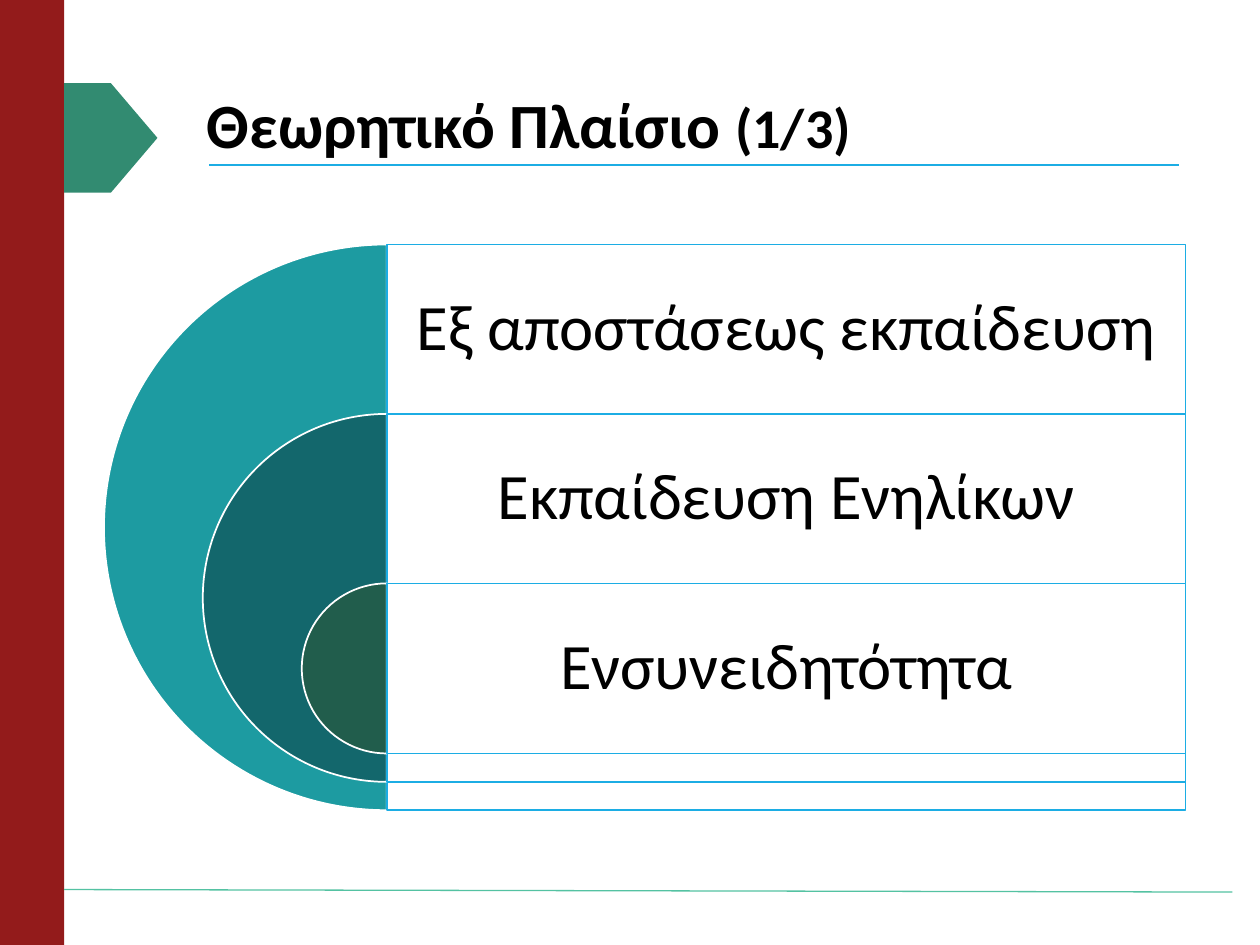
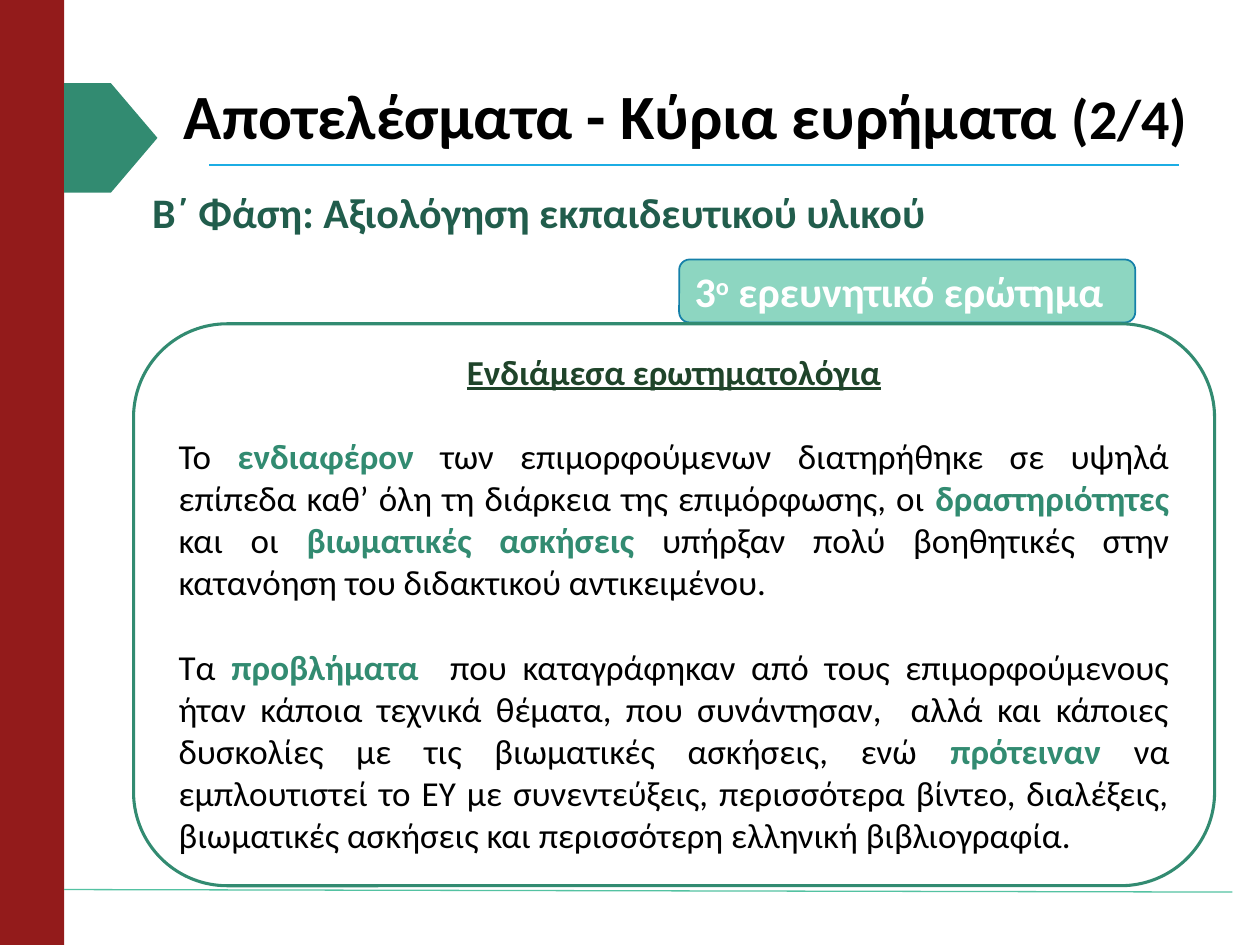
from lxml import etree
from pptx import Presentation
from pptx import util as u
from pptx.dml.color import RGBColor
from pptx.enum import shapes, text
from pptx.oxml.ns import qn

FONT = "Calibri"
RED, GREEN, BLUE, MINT = "931B1B", "328B71", "1CADE4", "54C2A2"
DARK, BLACK, WHITE = "215D4C", "000000", "FFFFFF"
SHAPE = shapes.MSO_SHAPE
ALIGN = text.PP_ALIGN
color = RGBColor.from_string

deck = Presentation()
deck.slide_width, deck.slide_height = u.Inches(10), u.Inches(7.5)
COLUMN, ROW = deck.slide_width / 100, deck.slide_height / 75


def draw(page, kind, cells, fill=None, line=None, weight=1):
    left, top, width, height = cells
    frame = [int(n) for n in (left * COLUMN, top * ROW, width * COLUMN, height * ROW)]
    if kind is None:
        box = page.shapes.add_textbox(*frame)
    else:
        box = page.shapes.add_shape(kind, *frame)
        box.shadow.inherit = False
    if fill:
        box.fill.solid()
        box.fill.fore_color.rgb = color(fill)
    else:
        box.fill.background()
    if line:
        box.line.color.rgb = color(line)
        box.line.width = u.Pt(weight)
    else:
        box.line.fill.background()
    box.text_frame.word_wrap = True
    return box


def write(para, runs, size, tint=BLACK, bold=None, align=ALIGN.LEFT):
    para.alignment = align
    para.font.name, para.font.size, para.font.bold = FONT, u.Pt(size), bold
    para.font.color.rgb = color(tint)
    for words in runs:
        para.add_run().text = words
    return para.runs


titles = [
    ("Θεωρητικό Πλαίσιο ", "(1/3)", (15.4, 6, 78.7, 8.4)),
    ("Αποτελέσματα - Κύρια ευρήματα ", "(2/4)", (13.6, 6.3, 85, 6.3)),
]
rules = [(16.6, 13.1, 93.6, 13.1, BLUE), (5.1, 70.6, 97.8, 70.8, MINT)]

for heading, count, (left, top, width, height) in titles:
    page = deck.slides.add_slide(deck.slide_layouts[5])
    title = page.shapes.title
    title.left, title.top = int(left * COLUMN), int(top * ROW)
    title.width, title.height = int(width * COLUMN), int(height * ROW)
    title.text_frame.auto_size = text.MSO_AUTO_SIZE.NONE
    title.text_frame.vertical_anchor = text.MSO_ANCHOR.MIDDLE
    para = title.text_frame.paragraphs[0]
    para.line_spacing = 0.9
    write(para, [heading, count], 36, bold=True)[1].font.size = u.Pt(32)

    draw(page, SHAPE.RECTANGLE, (0, 0, 5.1, 75), RED)
    for x1, y1, x2, y2, tint in rules:
        rule = page.shapes.add_connector(
            shapes.MSO_CONNECTOR.STRAIGHT,
            int(x1 * COLUMN), int(y1 * ROW), int(x2 * COLUMN), int(y2 * ROW))
        rule.line.color.rgb = color(tint)
        rule.line.width = u.Pt(0.75)
        etree.SubElement(rule._element.spPr, qn("a:effectLst"))
    draw(page, SHAPE.PENTAGON, (5.1, 6.6, 7.4, 8.7), GREEN)

theory, findings = deck.slides

topics = [
    ("Εξ αποστάσεως εκπαίδευση", "1D9BA1"),
    ("Εκπαίδευση Ενηλίκων", "13676C"),
    ("Ενσυνειδητότητα", DARK),
]
axis, first_row, step, panel_width = 30.7, 19.4, 13.45, 63.4
for index, (topic, tint) in enumerate(topics):
    top = first_row + index * step
    size = 44.9 - index * 15.7
    pie = draw(theory, SHAPE.PIE, (axis - size / 2, top, size, size), tint, WHITE)
    pie.adjustments[0], pie.adjustments[1] = 54, 162
    panel = draw(theory, SHAPE.RECTANGLE, (axis, top, panel_width, size), WHITE, BLUE)
    shade = panel._element.spPr.find(qn("a:solidFill"))[0]
    etree.SubElement(shade, qn("a:alpha"), val="90000")
    label = draw(theory, None, (axis, top, panel_width, step)).text_frame
    label.vertical_anchor = text.MSO_ANCHOR.MIDDLE
    label.margin_left = label.margin_right = u.Inches(0.15)
    label.margin_top = label.margin_bottom = u.Inches(0.15)
    label.paragraphs[0].line_spacing = 0.9
    write(label.paragraphs[0], [topic], 37, align=ALIGN.CENTER)

phase = draw(findings, None, (11.1, 14.3, 83.7, 5)).text_frame
write(phase.paragraphs[0], ["Β΄ Φάση: Αξιολόγηση εκπαιδευτικού υλικού"], 24, DARK, True)

body = draw(findings, None, (13.2, 27.3, 80.6, 41.4)).text_frame
subtitle = body.paragraphs[0]
write(subtitle, ["Ενδιάμεσα ερωτηματολόγια"], 20, "1F442A", True, ALIGN.CENTER)
subtitle.font.underline = True

results = [
    ["Το ", "ενδιαφέρον",
     " των επιμορφούμενων διατηρήθηκε σε υψηλά επίπεδα καθ’ όλη τη διάρκεια της "
     "επιμόρφωσης, οι ", "δραστηριότητες", " και οι ", "βιωματικές ασκήσεις ",
     "υπήρξαν πολύ βοηθητικές στην κατανόηση του διδακτικού αντικειμένου."],
    ["Τα", " προβλήματα",
     "  που καταγράφηκαν από τους επιμορφούμενους ήταν κάποια τεχνικά θέματα, που "
     "συνάντησαν,  αλλά και κάποιες δυσκολίες με τις βιωματικές ασκήσεις, ενώ ",
     "πρότειναν ",
     "να εμπλουτιστεί το ΕΥ με συνεντεύξεις, περισσότερα βίντεο, διαλέξεις, "
     "βιωματικές ασκήσεις και περισσότερη ελληνική βιβλιογραφία."],
]
for result in results:
    para = body.add_paragraph()
    para.space_before = u.Pt(24.4)
    for span in write(para, result, 20, align=ALIGN.JUSTIFY)[1::2]:
        span.font.bold = True
        span.font.color.rgb = color(GREEN)

question = draw(findings, SHAPE.ROUNDED_RECTANGLE, (53.9, 20.6, 36.2, 5), "8DD6C1", "1580A9")
question.text_frame.vertical_anchor = text.MSO_ANCHOR.MIDDLE
spans = write(question.text_frame.paragraphs[0], ["3", "ο", " ερευνητικό ερώτημα"], 24, WHITE, True)
spans[1]._r.get_or_add_rPr().set("baseline", "30000")

draw(findings, SHAPE.ROUNDED_RECTANGLE, (10.6, 25.7, 85.8, 44.6), line=GREEN, weight=1.75)

deck.save("out.pptx")
